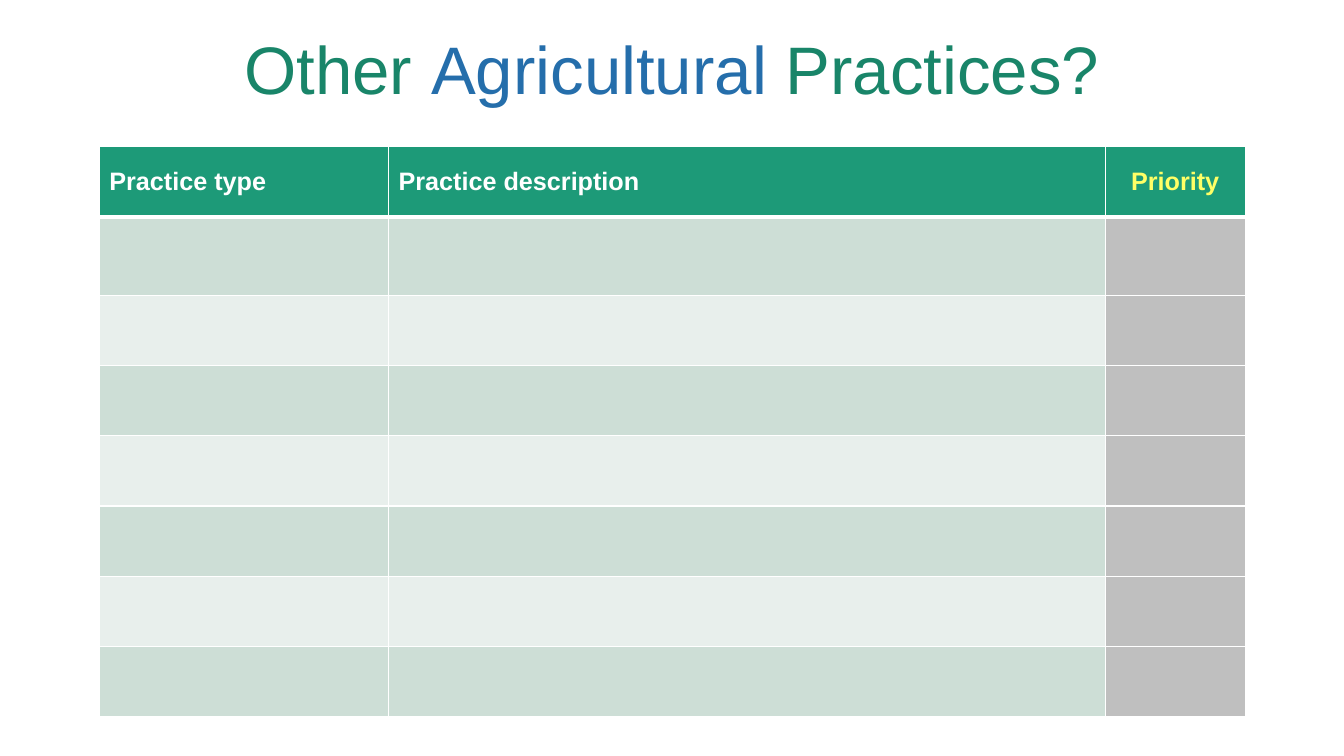
"""Build the slide with an empty table for other agricultural practices."""
from lxml.etree import SubElement
from pptx import Presentation
from pptx.dml.color import RGBColor
from pptx.enum.text import MSO_ANCHOR as ANCHOR, PP_ALIGN as ALIGN
from pptx.oxml.ns import qn
from pptx.util import Cm, Pt

FONT = "Arial"
WHITE = "FFFFFF"
TITLE = [("Other ", "198569"), ("Agricultural", "256EAB"), (" Practices?", "198569")]
COLUMNS = [
    ("Practice type", 7.29, WHITE, ALIGN.LEFT),
    ("Practice description", 18.06, WHITE, ALIGN.LEFT),
    ("Priority", 3.53, "FFFF66", ALIGN.CENTER),
]
ROW_HEIGHTS = [1.77, 1.98] + [1.77] * 6
HEADER_FILL, PRIORITY_FILL = "1D9A78", "BFBFBF"
BANDS = ["CDDED6", "E8EFEC"]
SLIDE_W, SLIDE_H = 33.87, 19.05
TABLE_LEFT, TABLE_TOP = 2.5, 3.69


def rgb(code):
    return RGBColor.from_string(code)


def set_borders(cell, top, bottom):
    tc_pr = cell._tc.get_or_add_tcPr()
    for tag, width in (("lnL", 1), ("lnR", 1), ("lnT", top), ("lnB", bottom)):
        ln = SubElement(tc_pr, qn(f"a:{tag}"), w=str(Pt(width)))
        SubElement(SubElement(ln, qn("a:solidFill")), qn("a:srgbClr"), val=WHITE)


def cell_fill(row, col):
    if row == 0:
        return HEADER_FILL
    if col == len(COLUMNS) - 1:
        return PRIORITY_FILL
    return BANDS[(row - 1) % 2]


def add_title(slide):
    sp = slide.shapes.add_textbox(0, 0, Cm(SLIDE_W), Cm(TABLE_TOP))
    tf = sp.text_frame
    tf.word_wrap = True
    tf.vertical_anchor = ANCHOR.MIDDLE
    p = tf.paragraphs[0]
    p.alignment = ALIGN.CENTER
    p.line_spacing = 0.9
    p.font.name, p.font.size = FONT, Pt(48)
    for text, color in TITLE:
        r = p.add_run()
        r.text = text
        r.font.color.rgb = rgb(color)


def add_practice_table(slide):
    width = sum(column[1] for column in COLUMNS)
    table = slide.shapes.add_table(
        len(ROW_HEIGHTS), len(COLUMNS), Cm(TABLE_LEFT), Cm(TABLE_TOP),
        Cm(width), Cm(sum(ROW_HEIGHTS))).table
    for row, height in enumerate(ROW_HEIGHTS):
        table.rows[row].height = Cm(height)
        for col in range(len(COLUMNS)):
            cell = table.cell(row, col)
            set_borders(cell, 3 if row == 1 else 1, 3 if row == 0 else 1)
            cell.fill.solid()
            cell.fill.fore_color.rgb = rgb(cell_fill(row, col))
    for col, (heading, col_width, color, align) in enumerate(COLUMNS):
        table.columns[col].width = Cm(col_width)
        cell = table.cell(0, col)
        cell.vertical_anchor = ANCHOR.MIDDLE
        cell.text = heading
        p = cell.text_frame.paragraphs[0]
        p.alignment = align
        p.font.name, p.font.size, p.font.bold = FONT, Pt(18), True
        p.font.color.rgb = rgb(color)


def main():
    prs = Presentation()
    prs.slide_width, prs.slide_height = Cm(SLIDE_W), Cm(SLIDE_H)
    s = prs.slides.add_slide(prs.slide_layouts[6])
    add_practice_table(s)
    add_title(s)
    prs.save("out.pptx")


if __name__ == "__main__":
    main()
